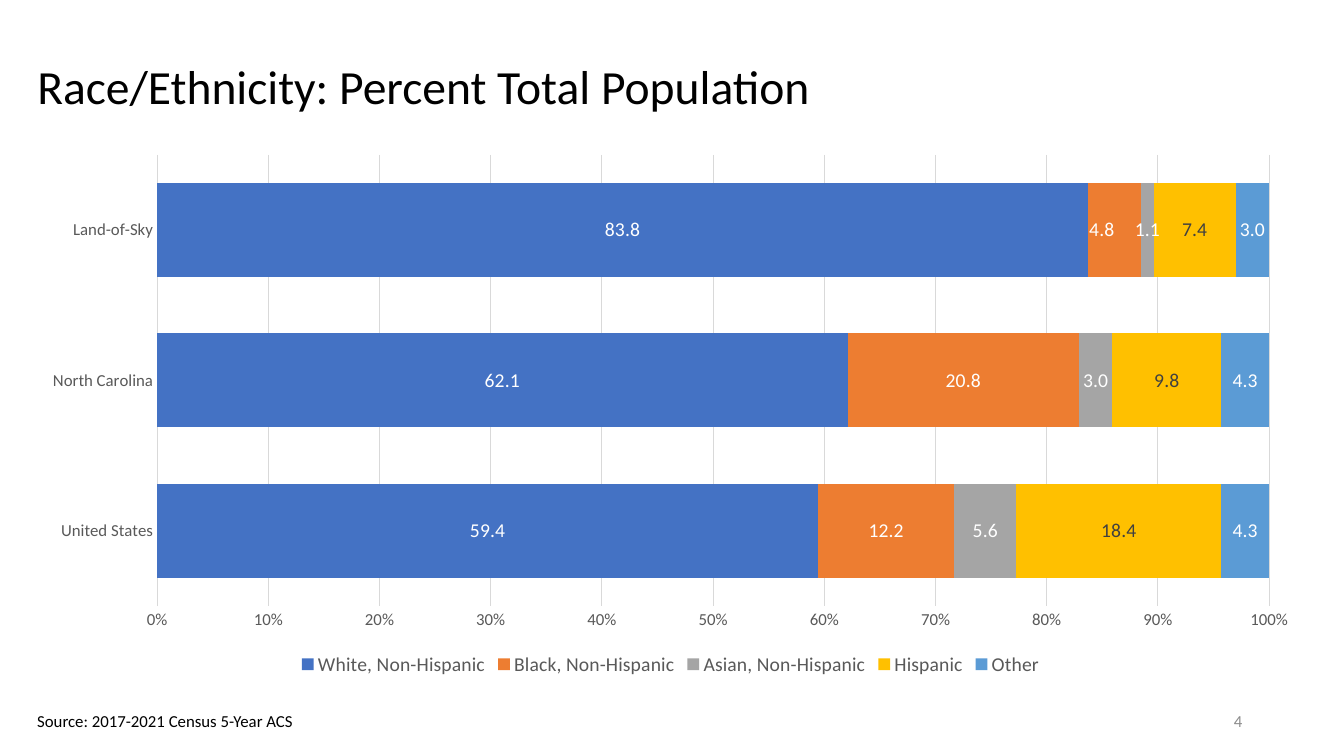
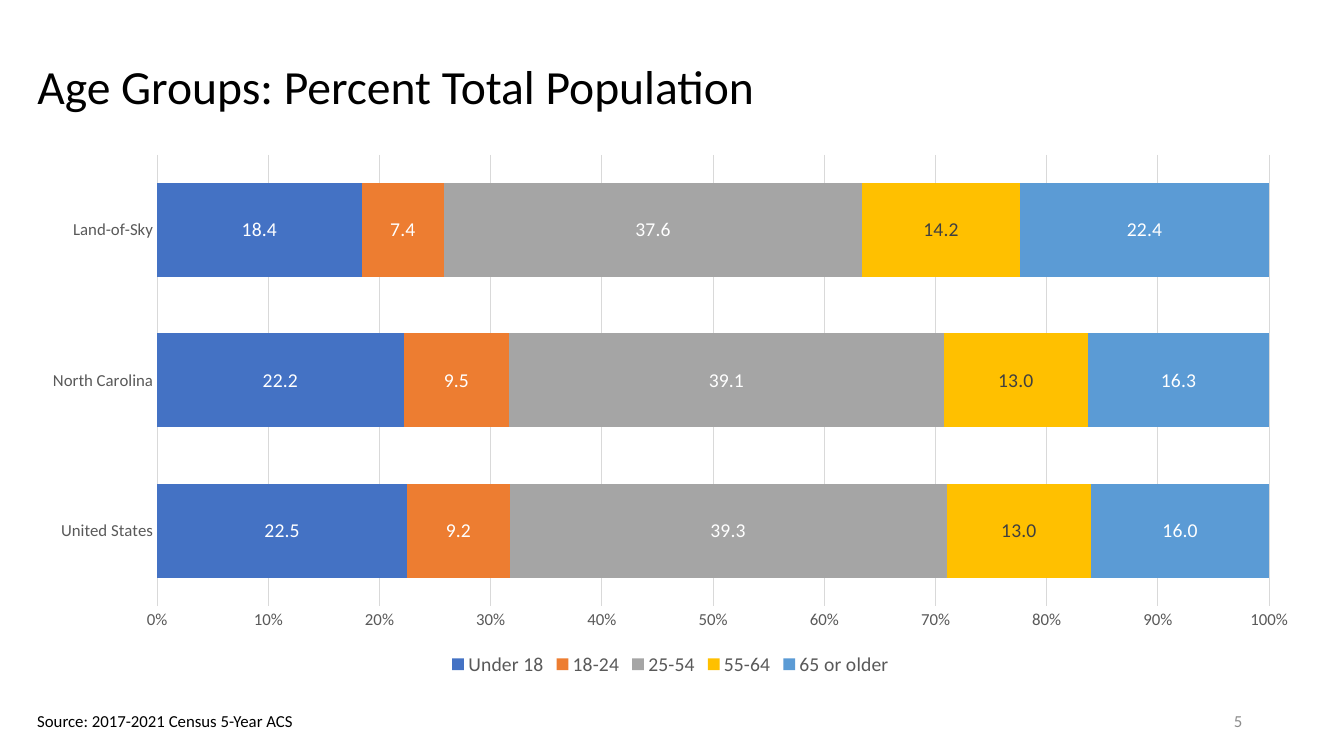
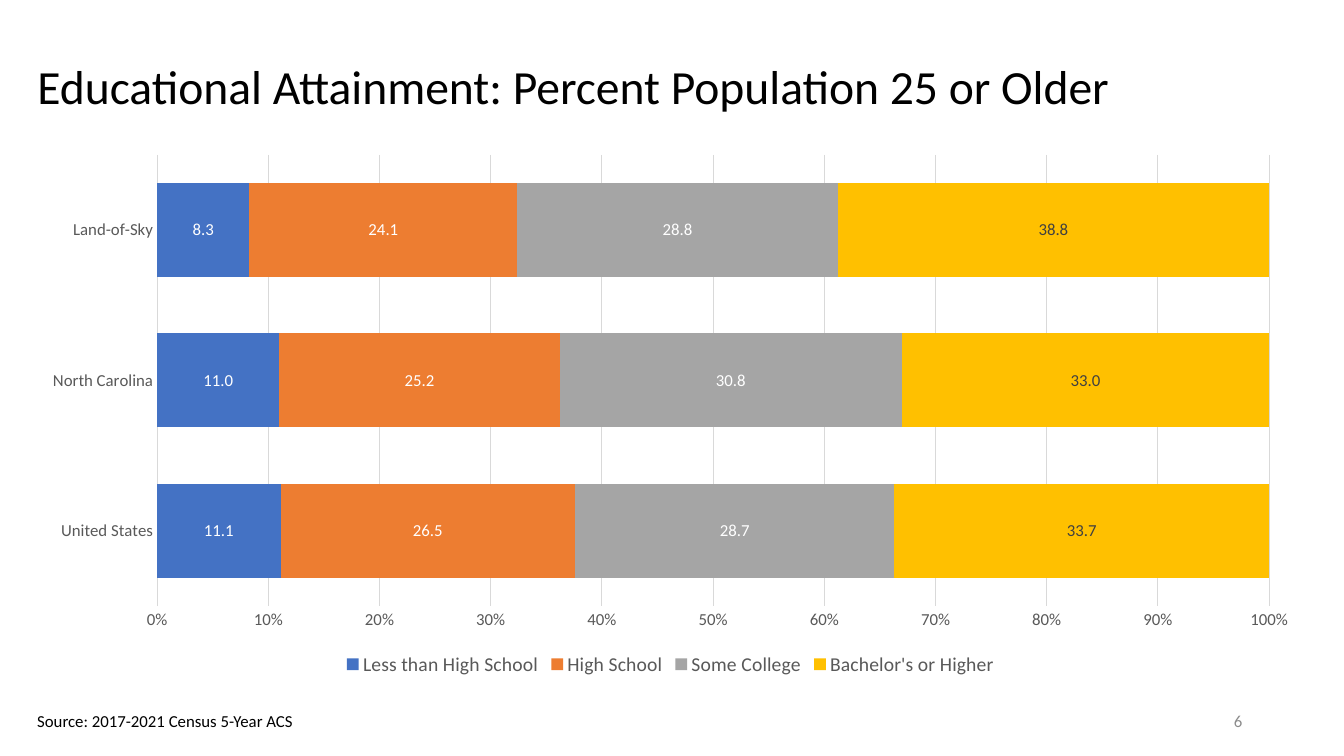
from lxml import etree
from pptx import Presentation
from pptx import util as u
from pptx.chart.data import CategoryChartData
from pptx.dml.color import RGBColor
from pptx.enum import chart as charts, text
from pptx.oxml.ns import qn

# Content: series values follow the order of REGIONS
REGIONS = ["United States", "North Carolina", "Land-of-Sky"]
SOURCE = "Source: 2017-2021 Census 5-Year ACS"
FIRST_NUMBER = 4
SLIDES = [
    {
        "title": "Race/Ethnicity: Percent Total Population",
        "label_size": 14,
        "series": [
            ("White, Non-Hispanic", (59.4, 62.1, 83.8)),
            ("Black, Non-Hispanic", (12.2, 20.8, 4.8)),
            ("Asian, Non-Hispanic", (5.6, 3.0, 1.1)),
            ("Hispanic", (18.4, 9.8, 7.4)),
            ("Other", (4.3, 4.3, 3.0)),
        ],
        # (series, region, shift as a share of the chart width)
        "moved_label": (1, 2, -0.01),
    },
    {
        "title": "Age Groups: Percent Total Population",
        "label_size": 14,
        "series": [
            ("Under 18", (22.5, 22.2, 18.4)),
            ("18-24", (9.2, 9.5, 7.4)),
            ("25-54", (39.3, 39.1, 37.6)),
            ("55-64", (13.0, 13.0, 14.2)),
            ("65 or older", (16.0, 16.3, 22.4)),
        ],
    },
    {
        "title": "Educational Attainment: Percent Population 25 or Older",
        "label_size": 12,
        "series": [
            ("Less than High School", (11.1, 11.0, 8.3)),
            ("High School", (26.5, 25.2, 24.1)),
            ("Some College", (28.7, 30.8, 28.8)),
            ("Bachelor's or Higher", (33.7, 33.0, 38.8)),
        ],
    },
]

# Shared style
FONT = "Calibri"
COLORS = {
    "black": "000000", "white": "FFFFFF", "dark": "404040",
    "axis": "595959", "grid": "D9D9D9", "number": "8C8C8C",
    "blue": "4472C4", "orange": "ED7D31", "gray": "A5A5A5",
    "gold": "FFC000", "sky": "5B9BD5",
}
# (bar colour, label colour) of each series in turn
SERIES_STYLES = [("blue", "white"), ("orange", "white"), ("gray", "white"),
                 ("gold", "dark"), ("sky", "white")]

# Layout in px, 100 px to the inch: left, top, width, height
PX = u.Inches(1) // 100
SLIDE_SIZE = (1333, 750)
TITLE_BOX = (27, 34, 1276, 109)
CHART_BOX = (27, 143, 1276, 532)
NUMBER_BOX = (942, 695, 300, 40)
SOURCE_BOX = (27, 700, 278, 30)


def emu(lengths):
    return [length * PX for length in lengths]


def color(name):
    return RGBColor.from_string(COLORS[name])


def style_font(font, size, color_name):
    font.name = FONT
    font.size = u.Pt(size)
    font.color.rgb = color(color_name)


def style_line(line, color_name):
    line.color.rgb = color(color_name)
    line.width = u.Pt(0.75)


def write(paragraph, words, size, color_name):
    run = paragraph.add_run()
    run.text = words
    style_font(run.font, size, color_name)


def add_title(slide, words):
    title = slide.shapes.title
    title.left, title.top, title.width, title.height = emu(TITLE_BOX)
    frame = title.text_frame
    frame.auto_size = text.MSO_AUTO_SIZE.NONE
    frame.vertical_anchor = text.MSO_ANCHOR.MIDDLE
    paragraph = frame.paragraphs[0]
    paragraph.alignment = text.PP_ALIGN.LEFT
    paragraph.line_spacing = 0.9
    write(paragraph, words, 34, "black")


def add_footer(slide, number):
    source = slide.shapes.add_textbox(*emu(SOURCE_BOX)).text_frame
    source.word_wrap = False
    source.auto_size = text.MSO_AUTO_SIZE.SHAPE_TO_FIT_TEXT
    write(source.paragraphs[0], SOURCE, 12, "black")

    page = slide.shapes.add_textbox(*emu(NUMBER_BOX)).text_frame
    page.word_wrap = True
    page.vertical_anchor = text.MSO_ANCHOR.MIDDLE
    page.paragraphs[0].alignment = text.PP_ALIGN.RIGHT
    write(page.paragraphs[0], str(number), 12, "number")


def move_label(series, region, shift, size, color_name):
    """Shift one data label sideways."""
    style_font(series.points[region].data_label.font, size, color_name)
    label = series._element.find(f"{qn('c:dLbls')}/{qn('c:dLbl')}")
    layout = etree.Element(qn("c:layout"))
    manual = etree.SubElement(layout, qn("c:manualLayout"))
    for tag, value in (("c:x", shift), ("c:y", 0)):
        etree.SubElement(manual, qn(tag)).set("val", str(value))
    label.insert(1, layout)


def add_bar_chart(slide, content):
    data = CategoryChartData(number_format="#,##0.0")
    data.categories = REGIONS
    for name, values in content["series"]:
        data.add_series(name, values)
    chart = slide.shapes.add_chart(
        charts.XL_CHART_TYPE.BAR_STACKED_100, *emu(CHART_BOX), data).chart
    style_font(chart.font, 10, "black")
    chart.has_title = False

    # Legend
    chart.has_legend = True
    chart.legend.position = charts.XL_LEGEND_POSITION.BOTTOM
    chart.legend.include_in_layout = False
    style_font(chart.legend.font, 14, "axis")

    # Axes
    for axis in (chart.category_axis, chart.value_axis):
        axis.major_tick_mark = charts.XL_TICK_MARK.NONE
        axis.minor_tick_mark = charts.XL_TICK_MARK.NONE
        style_font(axis.tick_labels.font, 12, "axis")
    style_line(chart.category_axis.format.line, "grid")
    value_axis = chart.value_axis
    value_axis.format.line.fill.background()
    value_axis.has_major_gridlines = True
    style_line(value_axis.major_gridlines.format.line, "grid")
    value_axis.tick_labels.number_format = "0%"
    value_axis.tick_labels.number_format_is_linked = False

    # Bars and their labels
    plot = chart.plots[0]
    plot.vary_by_categories = False
    plot.gap_width = 60
    plot.overlap = 100
    size = content["label_size"]
    for series, (fill, label_color) in zip(plot.series, SERIES_STYLES):
        series.format.fill.solid()
        series.format.fill.fore_color.rgb = color(fill)
        labels = series.data_labels
        labels.show_value = True
        labels.number_format = "#,##0.0"
        labels.number_format_is_linked = False
        style_font(labels.font, size, label_color)
    if "moved_label" in content:
        index, region, shift = content["moved_label"]
        move_label(plot.series[index], region, shift, size,
                   SERIES_STYLES[index][1])


def main():
    presentation = Presentation()
    presentation.slide_width, presentation.slide_height = emu(SLIDE_SIZE)
    title_only = presentation.slide_layouts[5]
    for number, content in enumerate(SLIDES, FIRST_NUMBER):
        slide = presentation.slides.add_slide(title_only)
        add_title(slide, content["title"])
        add_bar_chart(slide, content)
        add_footer(slide, number)
    presentation.save("out.pptx")


if __name__ == "__main__":
    main()
